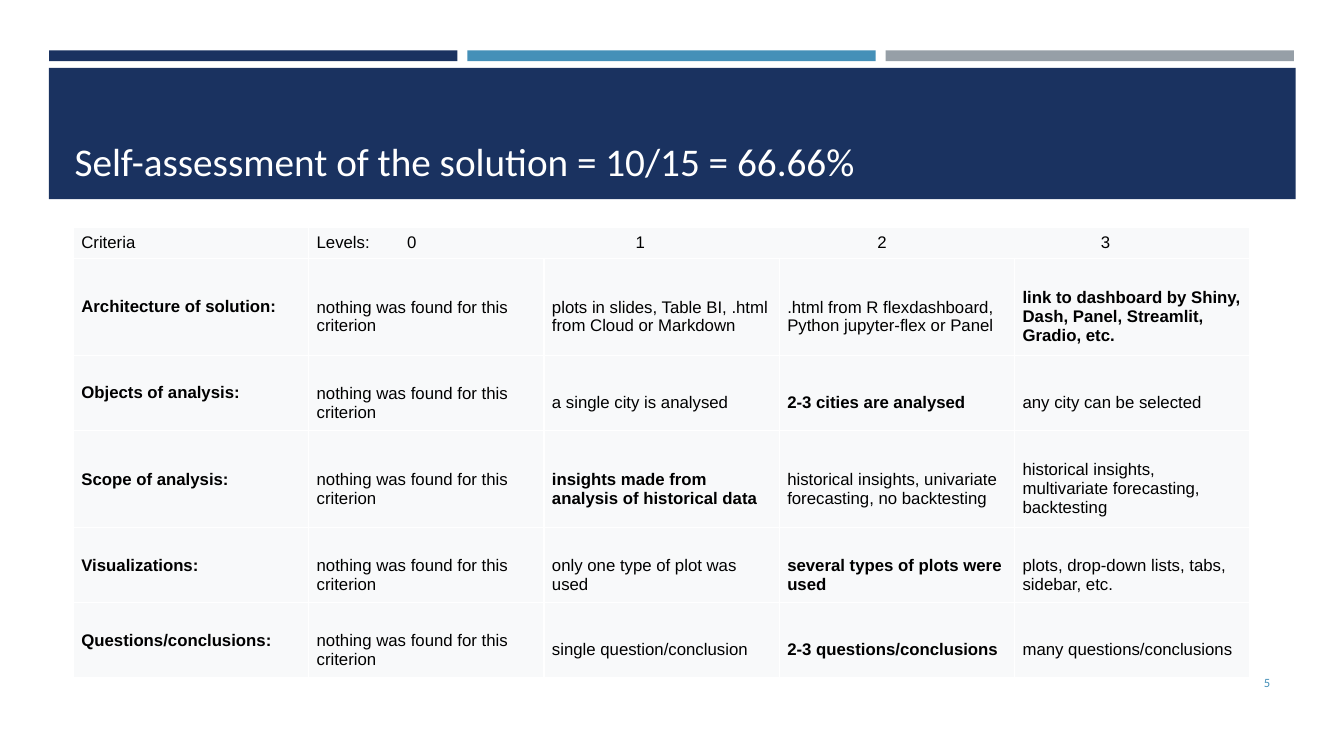
from lxml.etree import SubElement
from pptx import Presentation
from pptx.dml.color import RGBColor
from pptx.enum.shapes import MSO_SHAPE as Shape
from pptx.enum.text import MSO_ANCHOR as Anchor, PP_ALIGN as Align
from pptx.oxml.ns import qn
from pptx.util import Cm, Pt

NAVY, BLUE, GRAY = "1A3260", "4590B8", "969FA7"
WHITE, BLACK, PALE = "FFFFFF", "000000", "F8F9FA"
TITLE_FORMAT = {"name": "Calibri", "size": Pt(28)}
NUMBER_FORMAT = {"name": "Calibri", "size": Pt(9)}
CELL_FORMAT = {"name": "Arial", "size": Pt(12)}
CELL_LAYOUT = {
    "vertical_anchor": Anchor.MIDDLE,
    "margin_left": Cm(0.2), "margin_right": Cm(0.2),
    "margin_top": Cm(0.1), "margin_bottom": Cm(0.1),
}
LEVEL_TABS = [2.28, 8.04, 14.13, 19.76]
ROW_HEIGHTS = [0.79, 2.45, 1.89, 2.45, 1.89, 1.89]
COLUMN_WIDTH = 5.93
NOT_FOUND = "nothing was found for this criterion"
CRITERIA = [
    ("Architecture of solution:", 3, [
        "plots in slides, Table BI, .html from Cloud or Markdown",
        ".html from R flexdashboard, Python jupyter-flex or Panel",
        "link to dashboard by Shiny, Dash, Panel, Streamlit, Gradio, etc."]),
    ("Objects of analysis:", 2, [
        "a single city is analysed",
        "2-3 cities are analysed",
        "any city can be selected"]),
    ("Scope of analysis:", 1, [
        "insights made from analysis of historical data",
        "historical insights, univariate forecasting, no backtesting",
        "historical insights, multivariate forecasting, backtesting"]),
    ("Visualizations:", 2, [
        "only one type of plot was used",
        "several types of plots were used",
        "plots, drop-down lists, tabs, sidebar, etc."]),
    ("Questions/conclusions:", 2, [
        "single question/conclusion",
        "2-3 questions/conclusions",
        "many questions/conclusions"]),
]


def color(value):
    """Turn a hex string into a colour."""
    return RGBColor.from_string(value)


def apply(target, values):
    """Set each attribute of the target from a dict."""
    for name, value in values.items():
        setattr(target, name, value)


def write(paragraph, text, font_format, font_color):
    """Add one formatted run to a paragraph."""
    run = paragraph.add_run()
    run.text = text
    apply(run.font, font_format)
    run.font.color.rgb = color(font_color)


def add_bar(slide, left, top, width, height, fill):
    """Draw a plain filled rectangle."""
    box = [Cm(length) for length in (left, top, width, height)]
    shape = slide.shapes.add_shape(Shape.RECTANGLE, *box)
    shape.shadow.inherit = False
    shape.fill.solid()
    shape.fill.fore_color.rgb = color(fill)
    shape.line.fill.background()


def add_text(slide, box, text, font_format, font_color, anchor, align):
    """Place a one-paragraph text box."""
    frame = slide.shapes.add_textbox(*[Cm(length) for length in box]).text_frame
    apply(frame, {"word_wrap": True, "vertical_anchor": anchor})
    frame.paragraphs[0].alignment = align
    write(frame.paragraphs[0], text, font_format, font_color)


def fill_cell(cell, text, bold=False, top=0.1):
    """Style a table cell and write its text."""
    apply(cell, {**CELL_LAYOUT, "margin_top": Cm(top)})
    cell.fill.solid()
    cell.fill.fore_color.rgb = color(PALE)
    write(cell.text_frame.paragraphs[0], text, {**CELL_FORMAT, "bold": bold}, BLACK)


def set_tabs(paragraph, positions):
    """Give a paragraph left-aligned tab stops."""
    properties = paragraph._p.get_or_add_pPr()
    tab_list = SubElement(properties, qn("a:tabLst"))
    for position in positions:
        SubElement(tab_list, qn("a:tab"), pos=str(int(Cm(position))), algn="l")


def add_criteria_table(slide):
    """Build the table of criteria with the reached level in bold."""
    frame = slide.shapes.add_table(
        len(ROW_HEIGHTS), 5, Cm(1.85), Cm(5.72),
        Cm(5 * COLUMN_WIDTH), Cm(sum(ROW_HEIGHTS)))
    table = frame.table
    apply(table, {"first_row": False, "horz_banding": False})
    for column in table.columns:
        column.width = Cm(COLUMN_WIDTH)
    for row, height in zip(table.rows, ROW_HEIGHTS):
        row.height = Cm(height)

    levels = table.cell(0, 1)
    levels.merge(table.cell(0, 4))
    fill_cell(table.cell(0, 0), "Criteria")
    fill_cell(levels, "\t".join(["Levels:", "0", "1", "2", "3"]))
    set_tabs(levels.text_frame.paragraphs[0], LEVEL_TABS)

    for row, (criterion, reached, descriptions) in enumerate(CRITERIA, 1):
        fill_cell(table.cell(row, 0), criterion, bold=True)
        for level, text in enumerate([NOT_FOUND, *descriptions]):
            fill_cell(table.cell(row, level + 1), text, level == reached, top=0.59)


def main():
    """Build the slide and save it."""
    presentation = Presentation()
    apply(presentation, {"slide_width": Cm(33.87), "slide_height": Cm(19.05)})
    slide = presentation.slides.add_slide(presentation.slide_layouts[6])
    for index, fill in enumerate([NAVY, BLUE, GRAY]):
        add_bar(slide, 1.24 + index * 10.54, 1.27, 10.29, 0.27, fill)
    add_bar(slide, 1.23, 1.71, 31.42, 3.31, NAVY)
    add_text(slide, (1.63, 1.96, 30.63, 2.82),
             "Self-assessment of the solution = 10/15 = 66.66%",
             TITLE_FORMAT, WHITE, Anchor.BOTTOM, Align.LEFT)
    add_text(slide, (29.34, 16.69, 2.92, 1.02), "5",
             NUMBER_FORMAT, BLUE, Anchor.MIDDLE, Align.RIGHT)
    add_criteria_table(slide)
    presentation.save("out.pptx")


if __name__ == "__main__":
    main()
